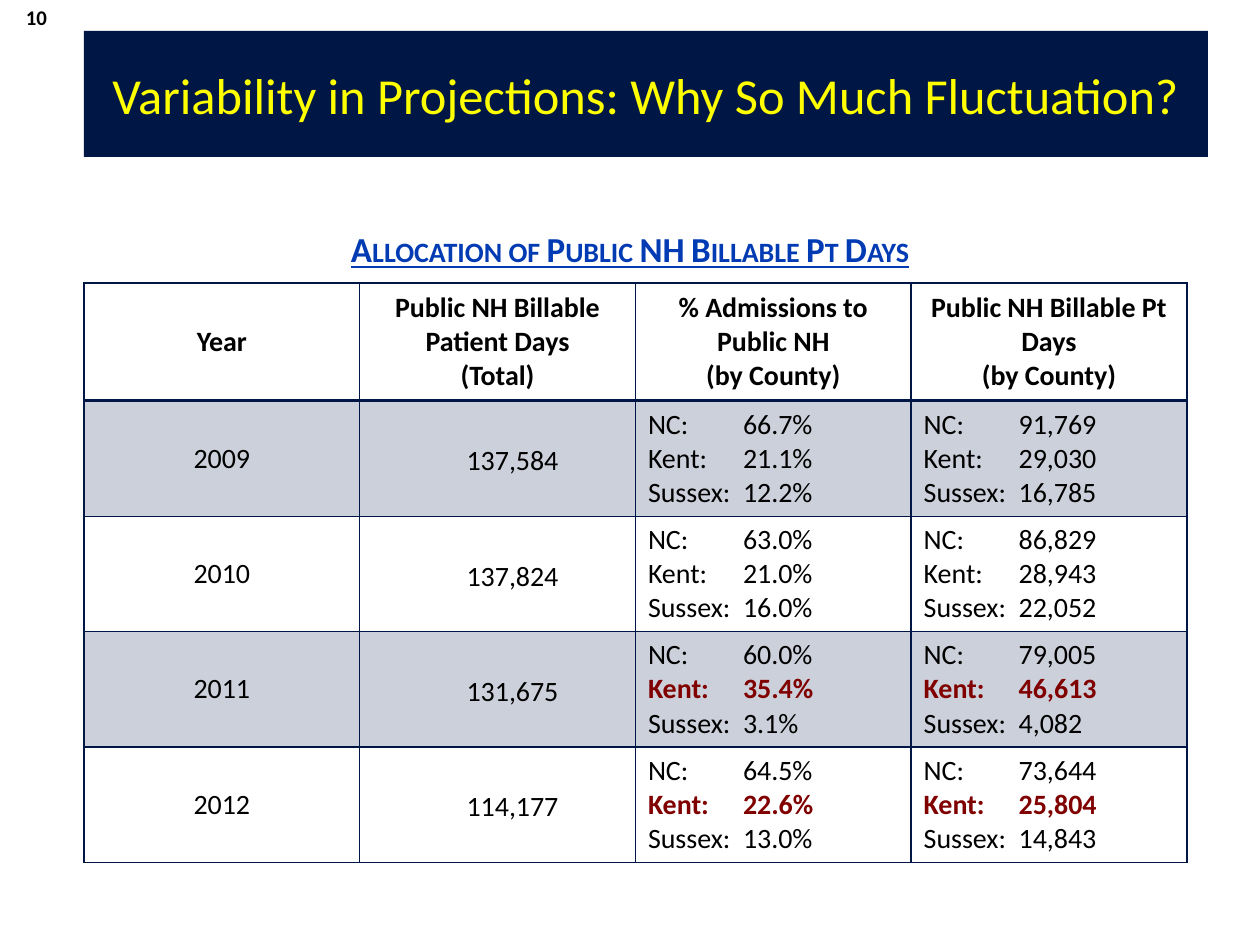
"""Build the slide on the allocation of public nursing home days by county."""
import pptx
import pptx.dml.color
import pptx.enum.shapes
import pptx.enum.text
import pptx.oxml
import pptx.oxml.ns
import pptx.util

NAVY, BLACK, MAROON, YELLOW, BLUE = "001746", "000000", "800000", "FFFF00", "003BB4"
ALIGN = pptx.enum.text.PP_ALIGN
MIDDLE = pptx.enum.text.MSO_ANCHOR.MIDDLE

PAGE_NUMBER = "10"
HEADLINE = "Variability in Projections: Why So Much Fluctuation?"
TABLE_TITLE = "Allocation of Public NH Billable Pt Days"
HEADINGS = [
    "Year",
    "Public NH Billable Patient Days\n(Total)",
    "% Admissions to Public NH\n(by County)",
    "Public NH Billable Pt Days\n(by County)",
]
COUNTIES = ["NC:", "Kent:", "Sussex:"]
YEARS = [
    ("2009", "137,584", ["66.7%", "21.1%", "12.2%"], ["91,769", "29,030", "16,785"]),
    ("2010", "137,824", ["63.0%", "21.0%", "16.0%"], ["86,829", "28,943", "22,052"]),
    ("2011", "131,675", ["60.0%", "35.4%", "3.1%"], ["79,005", "46,613", "4,082"]),
    ("2012", "114,177", ["64.5%", "22.6%", "13.0%"], ["73,644", "25,804", "14,843"]),
]
HIGHLIGHTS = {("2011", "Kent:"), ("2012", "Kent:")}

TABLE_LEFT, TABLE_TOP, TABLE_WIDTH = 84, 283, 1103
HEADING_HEIGHT, YEAR_HEIGHT = 118, 107
COUNTY_TAB, TOTAL_INDENT = 95, 30


def px(length):
    return round(length * 914400 / 126)


def rgb(value):
    return pptx.dml.color.RGBColor.from_string(value)


def xml(markup):
    return pptx.oxml.parse_xml(markup.replace(">", f" {pptx.oxml.ns.nsdecls('a')}>", 1))


def write(frame, text, size=16, color=BLACK, bold=False, align=ALIGN.CENTER,
          marked=(), tab=0, indent=0, spacing=None, before=None, heading=False):
    """Fill a text frame with one paragraph per line; marked lines stand out."""
    frame.word_wrap = True
    for number, line in enumerate(text.split("\n")):
        paragraph = frame.paragraphs[0] if number == 0 else frame.add_paragraph()
        paragraph.alignment = align
        if spacing:
            paragraph.line_spacing = spacing
        if before:
            paragraph.space_before = pptx.util.Pt(before)
        properties = paragraph._p.get_or_add_pPr()
        if indent:
            properties.set("marL", str(px(indent)))
        if tab:
            properties.append(xml(f'<a:tabLst><a:tab pos="{px(tab)}" algn="l"/></a:tabLst>'))
        run = paragraph.add_run()
        run.text = line
        font = run.font
        font.name, font.size = "Calibri", pptx.util.Pt(size)
        font.bold = bold or number in marked
        font.color.rgb = rgb(MAROON if number in marked else color)
        if heading:
            font.underline = True
            run._r.get_or_add_rPr().set("cap", "small")


def add_text(slide, box, text, **style):
    frame = slide.shapes.add_textbox(*map(px, box)).text_frame
    frame.vertical_anchor = MIDDLE
    write(frame, text, **style)


def add_banner(slide, box, text, **style):
    banner = slide.shapes.add_shape(pptx.enum.shapes.MSO_SHAPE.RECTANGLE, *map(px, box))
    banner.shadow.inherit = False
    banner.fill.solid()
    banner.fill.fore_color.rgb = rgb(NAVY)
    banner.line.fill.background()
    banner.text_frame.vertical_anchor = MIDDLE
    write(banner.text_frame, text, **style)


def format_cell(cell, row):
    cell.vertical_anchor = MIDDLE
    properties = cell._tc.get_or_add_tcPr()
    for side in "LRTB":
        thick = (row, side) in {(0, "B"), (1, "T")}
        properties.append(xml(
            f'<a:ln{side} w="{25400 if thick else 12700}"><a:solidFill>'
            f'<a:srgbClr val="{NAVY}"/></a:solidFill></a:ln{side}>'))
    if row % 2:
        cell.fill.solid()
        cell.fill.fore_color.rgb = rgb(NAVY)
        properties.find(".//" + pptx.oxml.ns.qn("a:solidFill") + "[last()]")
        tint = properties.findall(pptx.oxml.ns.qn("a:solidFill"))[0][0]
        tint.append(xml('<a:alpha val="20000"></a:alpha>'))
    else:
        cell.fill.background()


def write_counties(cell, year, values):
    lines = [f"{county}\t{value}" for county, value in zip(COUNTIES, values)]
    marked = [n for n, county in enumerate(COUNTIES) if (year, county) in HIGHLIGHTS]
    write(cell.text_frame, "\n".join(lines), align=ALIGN.LEFT, marked=marked, tab=COUNTY_TAB)


def add_allocation(slide):
    heights = [HEADING_HEIGHT] + [YEAR_HEIGHT] * len(YEARS)
    allocation = slide.shapes.add_table(
        len(heights), len(HEADINGS),
        *map(px, (TABLE_LEFT, TABLE_TOP, TABLE_WIDTH, sum(heights)))).table
    allocation.first_row = allocation.horz_banding = False
    for row, height in enumerate(heights):
        allocation.rows[row].height = px(height)
        for column in range(len(HEADINGS)):
            format_cell(allocation.cell(row, column), row)
    for column, heading in enumerate(HEADINGS):
        allocation.columns[column].width = px(TABLE_WIDTH / len(HEADINGS))
        write(allocation.cell(0, column).text_frame, heading, bold=True)
    for row, (year, total, *by_county) in enumerate(YEARS, 1):
        write(allocation.cell(row, 0).text_frame, year)
        total_cell = allocation.cell(row, 1)
        total_cell.margin_left = total_cell.margin_right = 0
        total_cell.margin_top = total_cell.margin_bottom = 0
        write(total_cell.text_frame, total, indent=TOTAL_INDENT, spacing=1.15, before=1.1)
        for column, values in enumerate(by_county, 2):
            write_counties(allocation.cell(row, column), year, values)


def main():
    deck = pptx.Presentation()
    deck.slide_width, deck.slide_height = px(1260), px(945)
    slide = deck.slides.add_slide(deck.slide_layouts[6])
    add_banner(slide, (84, 31, 1124, 126), HEADLINE, size=28.8, color=YELLOW)
    add_allocation(slide)
    add_text(slide, (63, 199, 1134, 98), TABLE_TITLE, size=20, color=BLUE, bold=True, heading=True)
    add_text(slide, (0, 0, 73, 34), PAGE_NUMBER, size=11.9, bold=True)
    deck.save("out.pptx")


if __name__ == "__main__":
    main()
